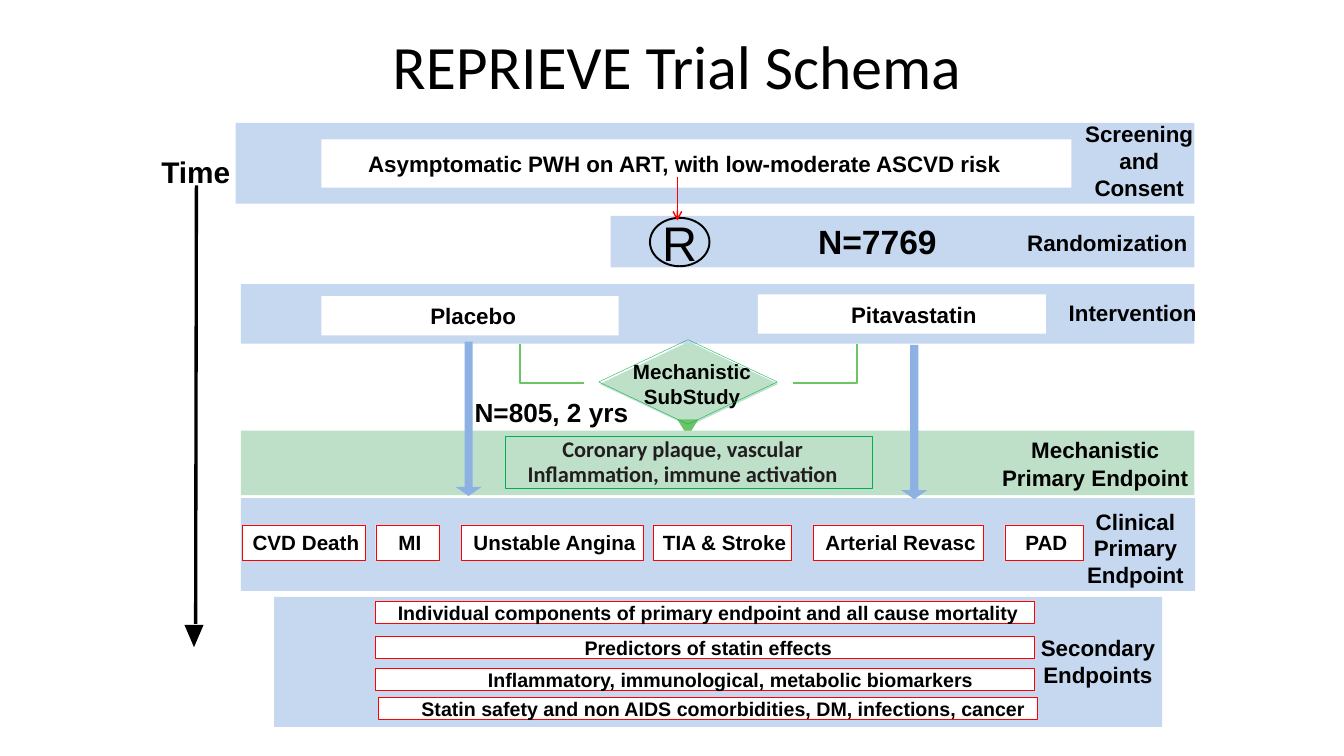
from dataclasses import dataclass
from typing import Optional

from lxml.etree import SubElement
from pptx import Presentation
from pptx.dml.color import RGBColor
from pptx.enum.shapes import MSO_CONNECTOR, MSO_SHAPE
from pptx.enum.text import MSO_ANCHOR, PP_ALIGN
from pptx.oxml.ns import qn
from pptx.shapes.autoshape import Shape
from pptx.slide import Slide
from pptx.util import Cm, Pt


@dataclass(frozen=True)
class Theme:
    ink: str = "000000"
    soft: str = "221E1F"
    white: str = "FFFFFF"
    blue: str = "C6D8F0"
    arrow: str = "8DB1E2"
    mint: str = "BEE0C9"
    leaf: str = "6CC468"
    green: str = "00B050"
    red: str = "FF0000"
    sans: str = "Arial"
    head: str = "Calibri"
    title: float = 44
    mark: float = 34.7
    count: float = 24
    time: float = 21.3
    sub: float = 18.7
    label: float = 16
    event: float = 14.7
    row: float = 14


T = Theme()


@dataclass(frozen=True)
class Words:
    lines: str
    size: float = T.label
    bold: bool = True
    font: str = T.sans
    color: str = T.ink
    shift: float = 0
    wrap: bool = False
    align: PP_ALIGN = PP_ALIGN.CENTER
    pitch: Optional[float] = None


@dataclass(frozen=True)
class Item:
    x: float
    y: float
    w: float
    h: float
    fill: Optional[str] = None
    line: Optional[str] = None
    width: float = 0.25
    words: Optional[Words] = None
    kind: MSO_SHAPE = MSO_SHAPE.RECTANGLE


@dataclass(frozen=True)
class Link:
    x1: float
    y1: float
    x2: float
    y2: float
    color: str
    width: float
    tip: bool = False


def write(shape: Shape, words: Words) -> None:
    frame = shape.text_frame
    frame.margin_top = frame.margin_bottom = 0
    frame.margin_left = Cm(max(0, 2 * words.shift))
    frame.margin_right = Cm(max(0, -2 * words.shift))
    frame.word_wrap = words.wrap
    frame.vertical_anchor = MSO_ANCHOR.MIDDLE
    frame.text = words.lines
    for para in frame.paragraphs:
        para.alignment = words.align
        if words.pitch:
            para.line_spacing = words.pitch
        font = para.font
        font.name = words.font
        font.size = Pt(words.size)
        font.bold = words.bold
        font.color.rgb = RGBColor.from_string(words.color)


def paint(shape: Shape, fill: Optional[str], line: Optional[str], width: float) -> None:
    shape.shadow.inherit = False
    if fill:
        shape.fill.solid()
        shape.fill.fore_color.rgb = RGBColor.from_string(fill)
    else:
        shape.fill.background()
    if line:
        shape.line.color.rgb = RGBColor.from_string(line)
        shape.line.width = Pt(width)
    else:
        shape.line.fill.background()


def draw(slide: Slide, item: Item) -> None:
    area = (Cm(item.x), Cm(item.y), Cm(item.w), Cm(item.h))
    if item.fill or item.line:
        shape = slide.shapes.add_shape(item.kind, *area)
        paint(shape, item.fill, item.line, item.width)
        if item.kind == MSO_SHAPE.DOWN_ARROW:
            shape.adjustments[0] = 0.31
            shape.adjustments[1] = 0.35
    else:
        shape = slide.shapes.add_textbox(*area)
    if item.words:
        write(shape, item.words)


def join(slide: Slide, link: Link) -> None:
    wire = slide.shapes.add_connector(
        MSO_CONNECTOR.STRAIGHT, Cm(link.x1), Cm(link.y1), Cm(link.x2), Cm(link.y2))
    wire.line.color.rgb = RGBColor.from_string(link.color)
    wire.line.width = Pt(link.width)
    props = wire.element.spPr
    if link.tip:
        SubElement(props.find(qn("a:ln")), qn("a:tailEnd"), type="arrow")
    SubElement(props, qn("a:effectLst"))


def bend(slide: Slide, start: float, end: float) -> None:
    pen = slide.shapes.build_freeform(Cm(start), Cm(8.66))
    pen.add_line_segments([(Cm(start), Cm(9.65)), (Cm(end), Cm(9.65))], close=False)
    paint(pen.convert_to_shape(), None, T.leaf, 1.63)


STUDY = [
    Item(15.11, 8.61, 4.5, 2.13, T.mint, kind=MSO_SHAPE.DIAMOND,
         words=Words("Mechanistic\nSubStudy", T.event, shift=0.08)),
    Item(17.07, 10.57, 0.53, 0.43, T.leaf, kind=MSO_SHAPE.FLOWCHART_MERGE),
]
PANELS = [
    Item(5.94, 3.1, 24.16, 2.03, T.blue),
    Item(15.39, 5.44, 14.71, 1.3, T.blue),
    Item(6.07, 7.16, 24.03, 1.5, T.blue),
    Item(6.07, 10.85, 24.03, 1.63, T.mint),
    Item(6.07, 12.55, 24.05, 2.34, T.blue),
    Item(6.91, 15.04, 22.38, 3.28, T.blue),
]
ARMS = [
    Item(8.1, 3.51, 18.9, 1.22, T.white, words=Words(
        "Asymptomatic PWH on ART, with low-moderate ASCVD risk", shift=-0.3)),
    Item(8.1, 7.46, 7.49, 0.99, T.white, words=Words("Placebo", shift=0.08)),
    Item(19.1, 7.42, 7.26, 0.99, T.white, words=Words("Pitavastatin", shift=0.3)),
]
MARKS = [
    Item(16.38, 5.49, 1.5, 1.22, line=T.ink, width=1.38, kind=MSO_SHAPE.OVAL,
         words=Words("R", T.mark, bold=False)),
    Item(12.73, 11, 9.25, 1.3, line=T.green, words=Words(
        "Coronary plaque, vascular\nInflammation, immune activation",
        font=T.head, color=T.soft, shift=-0.15, pitch=Pt(17.3))),
    Item(15.09, 8.56, 4.5, 2.13, line=T.green, kind=MSO_SHAPE.DIAMOND),
    Item(11.48, 8.61, 0.66, 3.89, T.arrow, kind=MSO_SHAPE.DOWN_ARROW),
    Item(22.71, 8.69, 0.66, 3.89, T.arrow, kind=MSO_SHAPE.DOWN_ARROW),
    Item(4.65, 15.75, 0.48, 0.56, T.ink, kind=MSO_SHAPE.FLOWCHART_MERGE),
]
EVENTS = [
    Item(x, 13.23, w, 0.89, T.white, T.red, words=Words(name, T.event, shift=0.06))
    for name, x, w in [
        ("CVD Death", 6.1, 3.1), ("MI", 9.47, 1.6), ("Unstable Angina", 11.63, 4.57),
        ("TIA & Stroke", 16.46, 3.48), ("Arterial Revasc", 20.5, 4.27), ("PAD", 25.32, 1.98)]
]
ROWS = [
    Item(x, y, 16.61, 0.56, T.white, T.red, 0.75, Words(name, T.row, shift=shift))
    for name, x, y, shift in [
        ("Individual components of primary endpoint and all cause mortality", 9.47, 15.16, 0.08),
        ("Predictors of statin effects", 9.47, 16.03, 0.08),
        ("Inflammatory, immunological, metabolic biomarkers", 9.47, 16.84, 0.64),
        ("Statin safety and non AIDS comorbidities, DM, infections, cancer", 9.53, 17.58, 0.4)]
]
LABELS = [
    Item(2.46, 0.66, 29.21, 2.21, words=Words(
        "REPRIEVE Trial Schema", T.title, False, T.head, pitch=0.9)),
    Item(27.25, 3.02, 2.92, 2.06, words=Words("Screening\nand\nConsent")),
    Item(25.86, 5.77, 4.09, 0.69, words=Words("Randomization")),
    Item(26.92, 7.54, 3.25, 0.69, words=Words("Intervention")),
    Item(25.15, 10.95, 4.9, 1.42, words=Words("Mechanistic\nPrimary Endpoint", pitch=Pt(20))),
    Item(27.28, 12.78, 2.67, 2.06, words=Words("Clinical Primary\nEndpoint", wrap=True)),
    Item(25.93, 15.98, 3.48, 1.37, words=Words("Secondary Endpoints", wrap=True)),
    Item(4.06, 3.86, 1.75, 0.91, words=Words("Time", T.time)),
    Item(11.96, 9.98, 3.9, 0.8, words=Words("N=805, 2 yrs", T.sub, align=PP_ALIGN.LEFT)),
    Item(20.23, 5.44, 3.76, 1.27, words=Words("N=7769", T.count)),
]
LINKS = [
    Link(17.07, 4.45, 17.07, 5.56, T.red, 1, True),
    Link(4.95, 4.67, 4.93, 15.72, T.ink, 2.38),
]


def main() -> None:
    deck = Presentation()
    deck.slide_width = Cm(33.87)
    deck.slide_height = Cm(19.05)
    slide = deck.slides.add_slide(deck.slide_layouts[6])
    for item in STUDY + PANELS + ARMS + MARKS + EVENTS + ROWS + LABELS:
        draw(slide, item)
    bend(slide, 13.11, 14.71)
    bend(slide, 21.59, 19.99)
    for link in LINKS:
        join(slide, link)
    deck.save("out.pptx")


if __name__ == "__main__":
    main()
